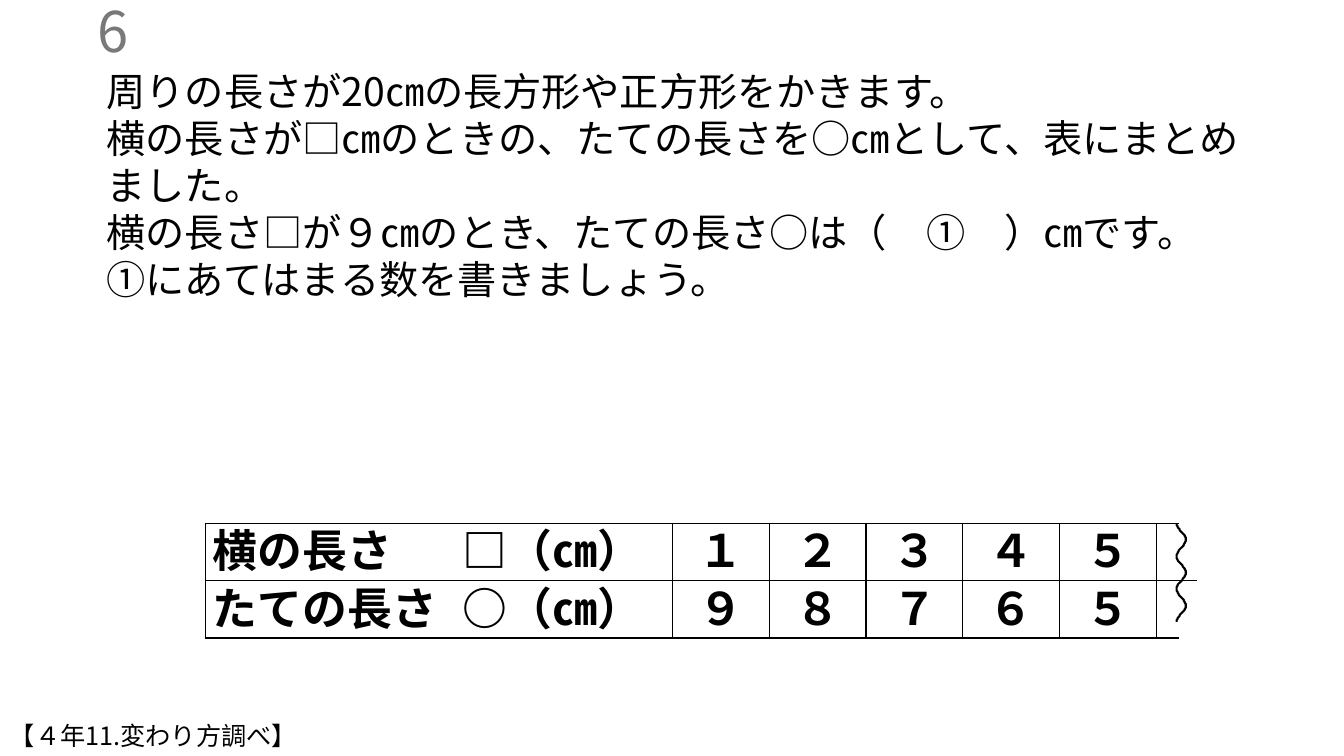
import math

from lxml import etree
from pptx import Presentation, util as u
from pptx.dml.color import RGBColor
from pptx.enum import text as t
from pptx.oxml.ns import qn

PX = 9144  # one hundredth of an inch
FONT = "Noto Sans CJK JP"
BLACK, GREY = "000000", "797979"

PROBLEM = [
    "周りの長さが20㎝の長方形や正方形をかきます。",
    "横の長さが□㎝のときの、たての長さを○㎝として、表にまとめました。",
    "横の長さ□が９㎝のとき、たての長さ○は（　①　）㎝です。",
    "①にあてはまる数を書きましょう。",
]
ROWS = [
    ["横の長さ", "□（㎝）", "１", "２", "３", "４", "５", "", ""],
    ["たての長さ", "○（㎝）", "９", "８", "７", "６", "５", "", ""],
]
COLUMN_WIDTHS = [248, 215] + [96] * 5 + [22, 7]
ROW_HEIGHT = 57
TABLE_LEFT, TABLE_TOP = 204, 519
NO_STYLE = "{2D5ABB26-0587-4C30-8999-92F81FD0307C}"


def px(value):
    return u.Emu(round(value * PX))


def color(hex_string):
    return RGBColor.from_string(hex_string)


def write(frame, lines, size, fill=BLACK, bold=False,
          align=t.PP_ALIGN.LEFT, spacing=None):
    """Fill a text frame, one paragraph for each line."""
    for index, line in enumerate(lines):
        paragraph = frame.add_paragraph() if index else frame.paragraphs[0]
        paragraph.alignment = align
        if spacing:
            paragraph.line_spacing = u.Pt(spacing)
        run = paragraph.add_run()
        run.text = line
        font = run.font
        font.name, font.size, font.bold = FONT, u.Pt(size), bold
        font.color.rgb = color(fill)
        latin = font._element.find(qn("a:latin"))
        latin.addnext(latin.makeelement(qn("a:ea"), {"typeface": FONT}))


def add_text(slide, box, lines, size, anchor=t.MSO_ANCHOR.TOP, **style):
    frame = slide.shapes.add_textbox(*map(px, box)).text_frame
    frame.word_wrap = True
    frame.vertical_anchor = anchor
    write(frame, lines, size, **style)


def set_borders(cell, sides):
    """Draw the given sides (L, R, T, B) and clear the others."""
    properties = cell._tc.get_or_add_tcPr()
    for side in "LRTB":
        line = etree.SubElement(properties, qn("a:ln" + side), w=str(u.Pt(1)))
        if side in sides:
            fill = etree.SubElement(line, qn("a:solidFill"))
            etree.SubElement(fill, qn("a:srgbClr"), val=BLACK)
        else:
            etree.SubElement(line, qn("a:noFill"))


def border_sides(row, column):
    """Open between the two label columns and at the torn right edge."""
    last = len(COLUMN_WIDTHS) - 1
    if column == last:
        return "T" if row else "B"
    return {0: "LTB", 1: "RTB", last - 1: "LTB"}.get(column, "LRTB")


def add_length_table(slide):
    shape = slide.shapes.add_table(
        len(ROWS), len(COLUMN_WIDTHS), px(TABLE_LEFT), px(TABLE_TOP),
        px(sum(COLUMN_WIDTHS)), px(ROW_HEIGHT * len(ROWS)))
    table = shape.table
    table.first_row = table.horz_banding = False
    table._tbl.tblPr.find(qn("a:tableStyleId")).text = NO_STYLE
    for column, width in zip(table.columns, COLUMN_WIDTHS):
        column.width = px(width)
    for row, values in enumerate(ROWS):
        table.rows[row].height = px(ROW_HEIGHT)
        for column, value in enumerate(values):
            cell = table.cell(row, column)
            cell.margin_left = cell.margin_right = px(7)
            cell.margin_top = cell.margin_bottom = 0
            set_borders(cell, border_sides(row, column))
            cell.fill.background()
            if value:
                align = t.PP_ALIGN.LEFT if column < 2 else t.PP_ALIGN.CENTER
                write(cell.text_frame, [value], 32, bold=True,
                      align=align, spacing=41)


def add_torn_edge(slide, left, top, width, height, waves):
    points = []
    for y in range(height + 1):
        swing = 1 - math.cos(2 * math.pi * waves * y / height)
        points.append((left + width / 2 * swing, top + y))
    builder = slide.shapes.build_freeform(*points[0], scale=PX)
    builder.add_line_segments(points[1:], close=False)
    shape = builder.convert_to_shape()
    shape.shadow.inherit = False
    shape.fill.background()
    shape.line.color.rgb = color(BLACK)
    shape.line.width = u.Pt(1.5)


def main():
    presentation = Presentation()
    presentation.slide_width, presentation.slide_height = px(1333), px(750)
    slide = presentation.slides.add_slide(presentation.slide_layouts[6])

    # Problem, its number and the unit name
    add_text(slide, (96, 62, 1153, 246), PROBLEM, 28, spacing=33.6)
    add_text(slide, (-163, 10, 300, 40), ["6"], 40, fill=GREY,
             anchor=t.MSO_ANCHOR.MIDDLE, align=t.PP_ALIGN.RIGHT)
    add_text(slide, (0, 710, 749, 40), ["【４年11.変わり方調べ】"], 18,
             spacing=21.6)

    # Table of lengths with a torn right edge
    add_length_table(slide)
    add_torn_edge(slide, 1167, TABLE_TOP, 9, 98, waves=3)

    presentation.save("out.pptx")


if __name__ == "__main__":
    main()
